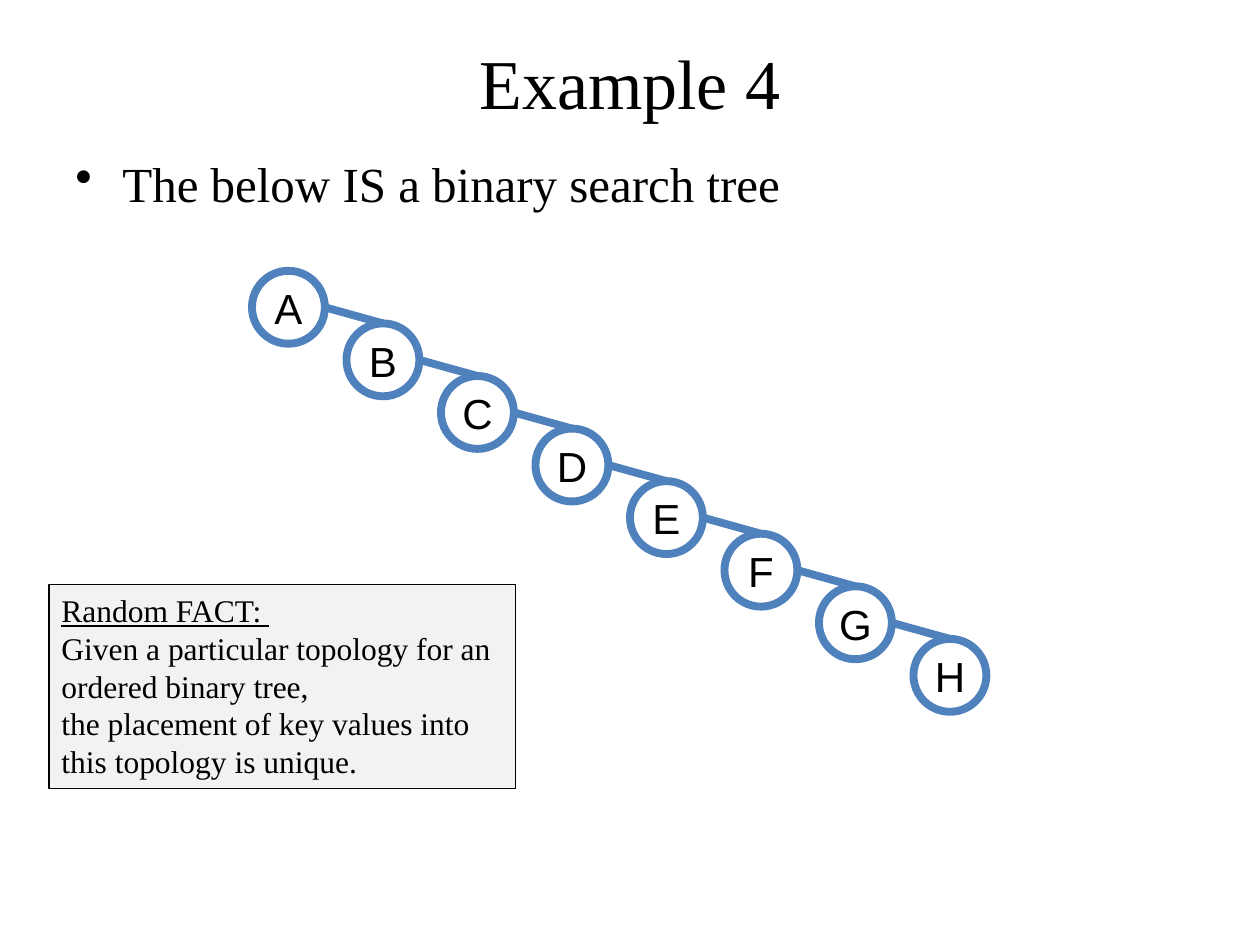
from dataclasses import dataclass
from itertools import pairwise

from lxml import etree
from pptx import Presentation
from pptx import util as u
from pptx.dml.color import RGBColor
from pptx.enum import shapes, text
from pptx.oxml.ns import qn


@dataclass(frozen=True)
class Theme:
    ink: RGBColor = RGBColor(0x00, 0x00, 0x00)
    tree: RGBColor = RGBColor(0x4F, 0x81, 0xBD)
    panel: RGBColor = RGBColor(0xF2, 0xF2, 0xF2)
    serif: str = "Times New Roman"
    sans: str = "Arial"
    title: float = 40
    body: float = 28
    key: float = 24
    fact: float = 18
    tree_line: float = 4.5
    panel_line: float = 0.75


THEME = Theme()
KEYS = "ABCDEFGH"

# Tree geometry in centimetres
ROOT_LEFT, ROOT_TOP = 5.08, 5.46
STEP_X, STEP_Y = 1.905, 1.06
DIAMETER = 1.47
KEY_HEIGHT, KEY_DROP = 1.27, 0.11


def format_runs(paragraph, font_name, size):
    for run in paragraph.runs:
        run.font.name = font_name
        run.font.size = u.Pt(size)
        run.font.color.rgb = THEME.ink


def add_text(slide, left, top, width, height, words, font_name, size, centred=True):
    box = slide.shapes.add_textbox(u.Cm(left), u.Cm(top), u.Cm(width), u.Cm(height))
    frame = box.text_frame
    frame.word_wrap = True
    frame.text = words
    paragraph = frame.paragraphs[0]
    if centred:
        frame.vertical_anchor = text.MSO_ANCHOR.MIDDLE
        paragraph.alignment = text.PP_ALIGN.CENTER
    format_runs(paragraph, font_name, size)
    return box


def add_bullet(paragraph, indent):
    paragraph.space_before = u.Pt(THEME.body * 0.2)
    properties = paragraph._p.get_or_add_pPr()
    properties.set("marL", str(u.Cm(indent)))
    properties.set("indent", str(-u.Cm(indent)))
    etree.SubElement(properties, qn("a:buChar")).set("char", "•")


def add_node(slide, left, top):
    node = slide.shapes.add_shape(
        shapes.MSO_SHAPE.OVAL, u.Cm(left), u.Cm(top), u.Cm(DIAMETER), u.Cm(DIAMETER))
    node.shadow.inherit = False
    node.fill.background()
    node.line.color.rgb = THEME.tree
    node.line.width = u.Pt(THEME.tree_line)
    return node


def add_key(slide, left, top, key):
    label = add_text(slide, left, top + KEY_DROP, DIAMETER, KEY_HEIGHT,
                     key, THEME.sans, THEME.key)
    label.text_frame.word_wrap = False


def add_edge(slide, parent, child):
    edge = slide.shapes.add_connector(
        shapes.MSO_CONNECTOR.STRAIGHT,
        parent.left + parent.width, parent.top + parent.height // 2,
        child.left + child.width // 2, child.top)
    edge.end_connect(child, 0)
    edge.line.color.rgb = THEME.tree
    edge.line.width = u.Pt(THEME.tree_line)
    etree.SubElement(edge._element.spPr, qn("a:effectLst"))


def add_tree(slide):
    places = [(ROOT_LEFT + i * STEP_X, ROOT_TOP + i * STEP_Y) for i in range(len(KEYS))]
    nodes = [add_node(slide, left, top) for left, top in places]
    for (left, top), key in zip(places, KEYS):
        add_key(slide, left, top, key)
    for parent, child in pairwise(nodes):
        add_edge(slide, parent, child)


def add_fact(slide):
    panel = slide.shapes.add_shape(
        shapes.MSO_SHAPE.RECTANGLE, u.Cm(0.99), u.Cm(11.79), u.Cm(9.4), u.Cm(4.11))
    panel.shadow.inherit = False
    panel.fill.solid()
    panel.fill.fore_color.rgb = THEME.panel
    panel.line.color.rgb = THEME.ink
    panel.line.width = u.Pt(THEME.panel_line)
    frame = panel.text_frame
    frame.word_wrap = True
    frame.vertical_anchor = text.MSO_ANCHOR.TOP
    # \v is a line break inside the first paragraph
    frame.text = ("Random FACT: \vGiven a particular topology for an ordered binary tree,\n"
                  "the placement of key values into this topology is unique.")
    for paragraph in frame.paragraphs:
        paragraph.alignment = text.PP_ALIGN.LEFT
        format_runs(paragraph, THEME.serif, THEME.fact)
    frame.paragraphs[0].runs[0].font.underline = True


def main():
    presentation = Presentation()
    presentation.slide_width = u.Cm(25.4)
    presentation.slide_height = u.Cm(19.05)
    slide = presentation.slides.add_slide(presentation.slide_layouts[6])

    # Heading and statement
    add_text(slide, 1.27, 0.76, 22.86, 1.78, "Example 4", THEME.serif, THEME.title)
    statement = add_text(slide, 1.27, 2.97, 22.86, 1.47,
                         "The below IS a binary search tree",
                         THEME.serif, THEME.body, centred=False)
    add_bullet(statement.text_frame.paragraphs[0], 0.95)

    # Degenerate tree, then the side note
    add_tree(slide)
    add_fact(slide)

    presentation.save("out.pptx")


if __name__ == "__main__":
    main()
